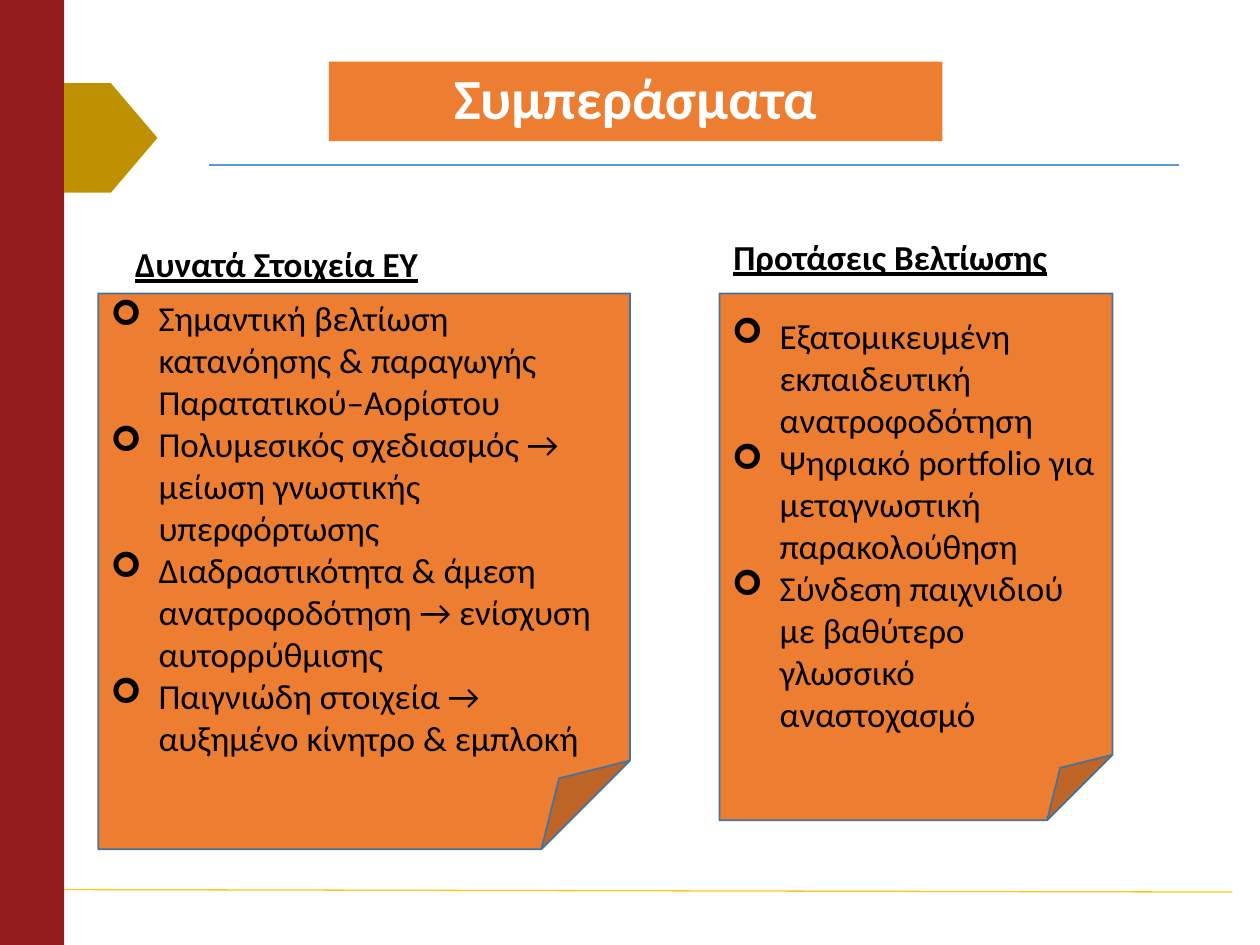
from dataclasses import dataclass

from lxml.etree import SubElement
from pptx import Presentation
from pptx.dml.color import RGBColor
from pptx.enum.shapes import MSO_CONNECTOR as Connector, MSO_SHAPE as Preset
from pptx.enum.text import MSO_ANCHOR as Anchor, PP_ALIGN as Align
from pptx.oxml.ns import qn
from pptx.util import Inches, Pt


@dataclass(frozen=True)
class Theme:
    font: str = "Calibri"
    band: str = "931B1B"
    marker: str = "BF9000"
    note: str = "ED7D31"
    note_edge: str = "43739E"
    top_rule: str = "5B9BD5"
    bottom_rule: str = "FFC61A"
    ink: str = "000000"
    title_ink: str = "FFFFFF"
    title_size: float = 32.4
    text_size: float = 20
    rule_width: float = 0.75
    edge_width: float = 1
    indent: float = 0.38


@dataclass(frozen=True)
class Area:
    left: float
    top: float
    width: float
    height: float

    def lengths(self) -> list:
        return [Inches(v) for v in (self.left, self.top, self.width, self.height)]


@dataclass(frozen=True)
class Rule:
    start: tuple[float, float]
    end: tuple[float, float]
    color: str


@dataclass(frozen=True)
class Note:
    heading: str
    heading_area: Area
    heading_spacing: float
    heading_wrap: bool
    area: Area
    points: tuple[str, ...]


THEME = Theme()

RULES = (
    Rule((1.66, 1.31), (9.36, 1.31), THEME.top_rule),
    Rule((0.51, 7.06), (9.78, 7.08), THEME.bottom_rule),
)

NOTES = (
    Note(
        "Δυνατά Στοιχεία ΕΥ", Area(0.67, 1.71, 3.05, 4.76), 1.5, True,
        Area(0.78, 2.33, 4.22, 4.41),
        (
            "Σημαντική βελτίωση κατανόησης & παραγωγής Παρατατικού–Αορίστου",
            "Πολυμεσικός σχεδιασμός → μείωση γνωστικής υπερφόρτωσης",
            "Διαδραστικότητα & άμεση ανατροφοδότηση → ενίσχυση αυτορρύθμισης",
            "Παιγνιώδη στοιχεία → αυξημένο κίνητρο & εμπλοκή",
        ),
    ),
    Note(
        "Προτάσεις Βελτίωσης", Area(5.71, 1.82, 2.71, 0.44), 1, False,
        Area(5.71, 2.33, 3.12, 4.18),
        (
            "Εξατομικευμένη εκπαιδευτική ανατροφοδότηση",
            "Ψηφιακό portfolio για μεταγνωστική παρακολούθηση",
            "Σύνδεση παιχνιδιού με βαθύτερο γλωσσικό αναστοχασμό",
        ),
    ),
)


def add_bullet(para) -> None:
    properties = para._p.get_or_add_pPr()
    properties.set("marL", str(Inches(THEME.indent)))
    properties.set("indent", str(-Inches(THEME.indent)))
    SubElement(properties, qn("a:buFont"), typeface="Wingdings")
    SubElement(properties, qn("a:buChar"), char="➢")


def write(box, *lines: str, size: float = THEME.text_size, color: str = THEME.ink,
          bold: bool = False, underline: bool = False, align=Align.CENTER,
          anchor=Anchor.TOP, spacing: float = 1, bullet: bool = False,
          wrap: bool = True) -> None:
    frame = box.text_frame
    frame.word_wrap = wrap
    frame.vertical_anchor = anchor
    for index, line in enumerate(lines):
        para = frame.add_paragraph() if index else frame.paragraphs[0]
        if bullet:
            add_bullet(para)
        para.alignment = align
        para.line_spacing = spacing
        span = para.add_run()
        span.text = line
        font = span.font
        font.name = THEME.font
        font.size = Pt(size)
        font.bold = bold
        font.underline = underline
        font.color.rgb = RGBColor.from_string(color)


def add_block(page, preset, area: Area, fill: str, edge: str | None = None):
    block = page.shapes.add_shape(preset, *area.lengths())
    block.shadow.inherit = False
    block.fill.solid()
    block.fill.fore_color.rgb = RGBColor.from_string(fill)
    if edge:
        block.line.color.rgb = RGBColor.from_string(edge)
        block.line.width = Pt(THEME.edge_width)
    else:
        block.line.fill.background()
    return block


def add_rule(page, rule: Rule) -> None:
    ends = [Inches(v) for v in (*rule.start, *rule.end)]
    line = page.shapes.add_connector(Connector.STRAIGHT, *ends)
    line.line.color.rgb = RGBColor.from_string(rule.color)
    line.line.width = Pt(THEME.rule_width)
    SubElement(line._element.spPr, qn("a:effectLst"))


def add_note(page, note: Note) -> None:
    heading = page.shapes.add_textbox(*note.heading_area.lengths())
    write(heading, note.heading, bold=True, underline=True,
          spacing=note.heading_spacing, wrap=note.heading_wrap)
    sheet = add_block(page, Preset.FOLDED_CORNER, note.area, THEME.note, THEME.note_edge)
    write(sheet, *note.points, align=Align.LEFT, anchor=Anchor.MIDDLE, bullet=True)


def main() -> None:
    deck = Presentation()
    deck.slide_width, deck.slide_height = Inches(10), Inches(7.5)
    page = deck.slides.add_slide(deck.slide_layouts[6])

    add_block(page, Preset.RECTANGLE, Area(0, 0, 0.51, 7.5), THEME.band)
    for rule in RULES:
        add_rule(page, rule)
    add_block(page, Preset.PENTAGON, Area(0.51, 0.66, 0.74, 0.87), THEME.marker)

    title = add_block(page, Preset.RECTANGLE, Area(2.61, 0.49, 4.87, 0.63), THEME.note)
    write(title, "Συμπεράσματα", size=THEME.title_size, color=THEME.title_ink,
          bold=True, anchor=Anchor.MIDDLE, spacing=0.9)

    for note in NOTES:
        add_note(page, note)

    deck.save("out.pptx")


if __name__ == "__main__":
    main()
